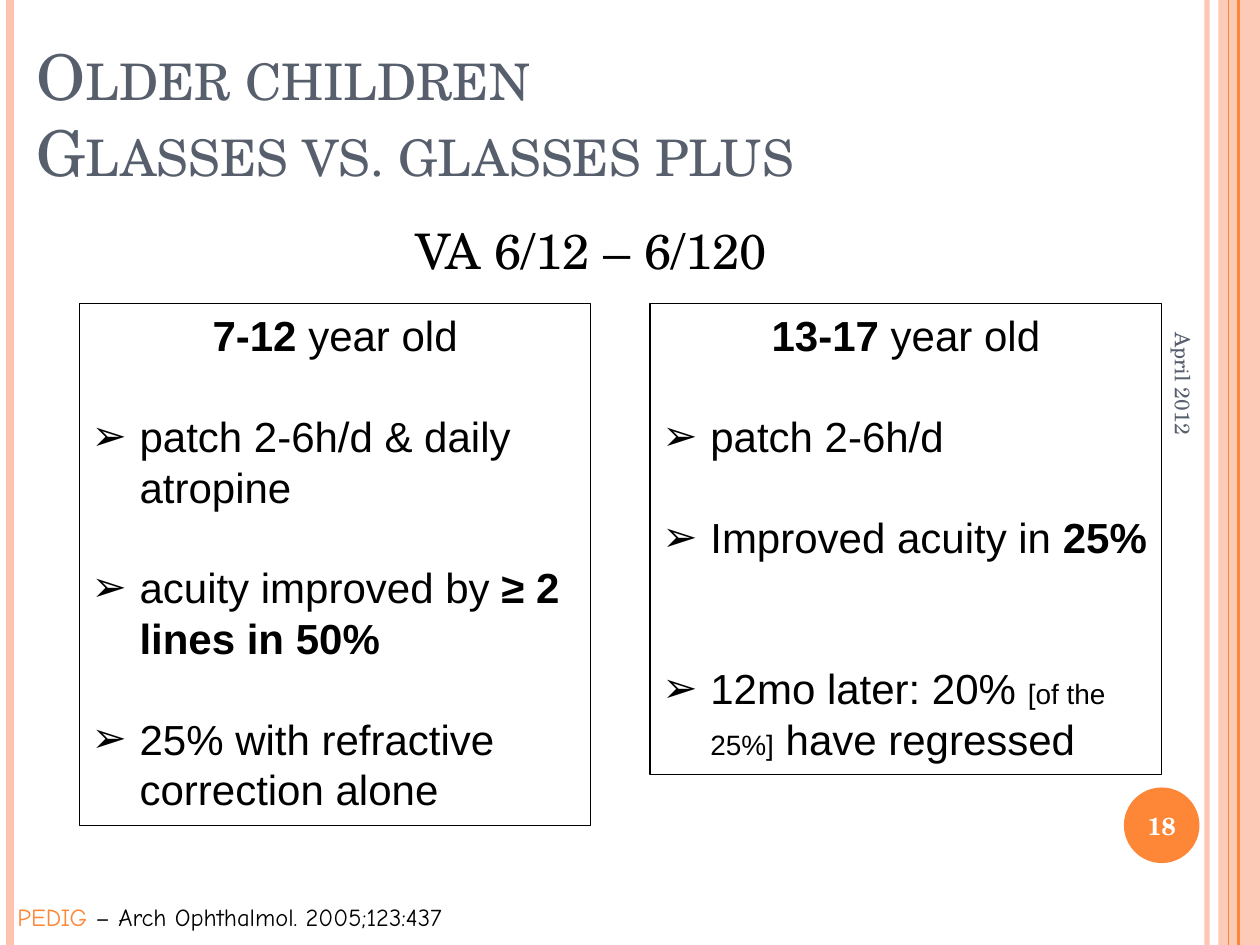
from lxml.etree import SubElement
from pptx import Presentation
from pptx.dml.color import RGBColor
from pptx.enum.shapes import MSO_CONNECTOR, MSO_SHAPE
from pptx.enum.text import MSO_ANCHOR, MSO_AUTO_SIZE, PP_ALIGN
from pptx.oxml.ns import qn
from pptx.util import Inches, Pt

BLACK = RGBColor(0x00, 0x00, 0x00)
WHITE = RGBColor(0xFF, 0xFF, 0xFF)
SLATE = RGBColor(0x57, 0x5F, 0x6D)
ORANGE = RGBColor(0xFE, 0x86, 0x37)
PEACH = RGBColor(0xFE, 0xC3, 0xAE)
SERIF, SANS, HAND = "TeX Gyre Schola", "Arial", "Comic Neue"
LINE = 28.8  # line pitch of the two panels, points


def add_run(p, text, size, font, color, bold=False):
    r = p.add_run()
    r.text = text
    r.font.size, r.font.name, r.font.bold = Pt(size), font, bold
    r.font.color.rgb = color
    return r


def set_alpha(fill, percent):
    """Make a solid fill, of a shape or of a line, partly transparent."""
    color = fill._xPr.find(qn("a:solidFill"))[0]
    SubElement(color, qn("a:alpha"), val=str(percent * 1000))


prs = Presentation()
prs.slide_width, prs.slide_height = Inches(10), Inches(7.5)
W, H = prs.slide_width, prs.slide_height
s = prs.slides.add_slide(prs.slide_layouts[1])

# Side bands
band = s.shapes.add_shape(MSO_SHAPE.RECTANGLE, Inches(9.67), 0, W - Inches(9.67), H)
band.shadow.inherit = False
band.fill.solid()
band.fill.fore_color.rgb = PEACH
set_alpha(band.fill, 87)
band.line.fill.background()

for x, color, width, alpha in (
    (0.08, PEACH, 4.5, 100),
    (9.58, PEACH, 3, 93),
    (9.75, ORANGE, 0.75, 100),
    (9.83, ORANGE, 1.5, 100),
):
    rule = s.shapes.add_connector(MSO_CONNECTOR.STRAIGHT, Inches(x), 0, Inches(x), H)
    rule.line.color.rgb = color
    rule.line.width = Pt(width)
    if alpha < 100:
        set_alpha(rule.line.fill, alpha)
    SubElement(rule._element.spPr, qn("a:effectLst"))

# Title and subtitle
title, body = s.placeholders
for sp, top, height in ((title, 0.13, 1.42), (body, 1.7, 0.83)):
    sp.left, sp.top, sp.width, sp.height = Inches(0.19), Inches(top), Inches(9), Inches(height)
    sp.text_frame.auto_size = MSO_AUTO_SIZE.NONE

title.text_frame.vertical_anchor = MSO_ANCHOR.BOTTOM
p = title.text_frame.paragraphs[0]
p.alignment = PP_ALIGN.LEFT
for i, text in enumerate(("Older children", "Glasses vs. glasses plus")):
    if i:
        p.add_line_break()
    r = add_run(p, text, 36, SERIF, SLATE)
    r.font._element.set("cap", "small")

p = body.text_frame.paragraphs[0]
p.alignment = PP_ALIGN.CENTER
p.space_before = Pt(6)
pPr = p._p.get_or_add_pPr()
pPr.set("marL", "0")
pPr.set("indent", "0")
SubElement(pPr, qn("a:buNone"))
add_run(p, "VA 6/12 – 6/120", 28, SERIF, BLACK)

# Age panels: heading, then bullets as (blank lines above, runs of text, size, bold)
panels = (
    (0.63, 4.14, "7-12 ", (
        (1, (("patch 2-6h/d & daily atropine", 24, False),)),
        (1, (("acuity improved by ", 24, False), ("≥ 2 lines in 50%", 24, True))),
        (1, (("25% with refractive correction alone", 24, False),)),
    )),
    (5.16, 3.74, "13-17 ", (
        (1, (("patch 2-6h/d", 24, False),)),
        (1, (("Improved acuity in ", 24, False), ("25%", 24, True))),
        (2, (("12mo later: 20% ", 24, False), ("[of the 25%]", 16, False),
             (" have regressed", 24, False))),
    )),
)
for left, height, ages, bullets in panels:
    panel = s.shapes.add_shape(
        MSO_SHAPE.RECTANGLE, Inches(left), Inches(2.41), Inches(4.06), Inches(height))
    panel.shadow.inherit = False
    panel.fill.background()
    panel.line.color.rgb = BLACK
    panel.line.width = Pt(0.75)
    tf = panel.text_frame
    tf.word_wrap = True
    tf.vertical_anchor = MSO_ANCHOR.TOP
    p = tf.paragraphs[0]
    p.alignment = PP_ALIGN.CENTER
    p.line_spacing = Pt(LINE)
    add_run(p, ages, 24, SANS, BLACK, True)
    add_run(p, "year old", 24, SANS, BLACK)
    for gap, runs in bullets:
        p = tf.add_paragraph()
        p.alignment = PP_ALIGN.LEFT
        p.line_spacing = Pt(LINE)
        p.space_before = Pt(gap * LINE)
        pPr = p._p.get_or_add_pPr()
        pPr.set("marL", str(Inches(0.38)))
        pPr.set("indent", str(-Inches(0.38)))
        SubElement(pPr, qn("a:buFont"), typeface=SANS)
        SubElement(pPr, qn("a:buChar"), char="➢")
        for text, size, bold in runs:
            add_run(p, text, size, SANS, BLACK, bold)

# Source
source = s.shapes.add_textbox(Inches(0.04), Inches(7.11), Inches(3.95), Inches(0.34))
source.text_frame.word_wrap = False
p = source.text_frame.paragraphs[0]
add_run(p, "PEDIG ", 14, HAND, ORANGE)
add_run(p, "– Arch Ophthalmol. 2005;123:437", 14, HAND, BLACK)

# Date, running down the right side
date = s.shapes.add_textbox(Inches(7.64), Inches(4.09), Inches(3.5), Inches(0.4))
date.rotation = 90
date.text_frame.word_wrap = True
date.text_frame.vertical_anchor = MSO_ANCHOR.MIDDLE
add_run(date.text_frame.paragraphs[0], "April 2012", 12, SERIF, SLATE)

# Slide number
badge = s.shapes.add_shape(
    MSO_SHAPE.OVAL, Inches(8.92), Inches(6.25), Inches(0.6), Inches(0.6))
badge.shadow.inherit = False
badge.fill.solid()
badge.fill.fore_color.rgb = ORANGE
badge.line.fill.background()
tf = badge.text_frame
tf.margin_left = tf.margin_right = 0
tf.vertical_anchor = MSO_ANCHOR.MIDDLE
p = tf.paragraphs[0]
p.alignment = PP_ALIGN.CENTER
add_run(p, "18", 14, SERIF, WHITE, True)

prs.save("out.pptx")
